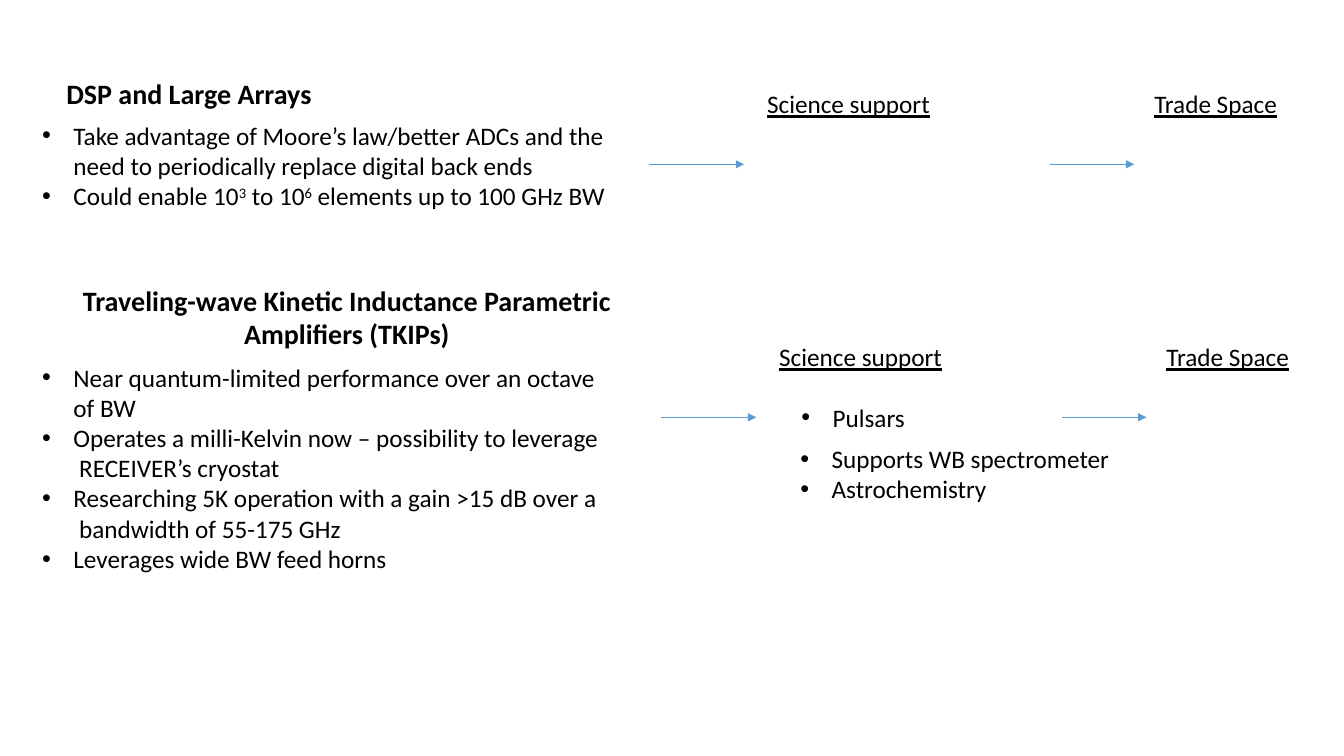
from lxml.etree import SubElement
from pptx import Presentation
from pptx.dml.color import RGBColor
from pptx.enum.shapes import MSO_CONNECTOR
from pptx.enum.text import MSO_AUTO_SIZE, PP_ALIGN
from pptx.oxml.ns import qn
from pptx.util import Inches, Pt

COLORS = {"text": "000000", "arrow": "5B9BD5"}
FONT = "Calibri"
BULLET_INDENT = 0.31

ARRAY_POINTS = [
    ["Take advantage of Moore’s law/better ADCs and the need to periodically replace digital back ends"],
    ["Could enable 10", ("3", 30), " to 10", ("6", 30), " elements up to 100 GHz BW"],
]
AMPLIFIER_POINTS = [
    ["Near quantum-limited performance over an octave of BW"],
    ["Operates a milli-Kelvin now – possibility to leverage  RECEIVER’s cryostat"],
    ["Researching 5K operation with a gain >15 dB over a  bandwidth of 55-175 GHz"],
    ["Leverages wide BW feed horns"],
]


def add_text_frame(slide, left, top, width, height, wrap):
    box = slide.shapes.add_textbox(Inches(left), Inches(top), Inches(width), Inches(height))
    frame = box.text_frame
    frame.word_wrap = wrap
    frame.auto_size = MSO_AUTO_SIZE.SHAPE_TO_FIT_TEXT
    return frame


def add_run(paragraph, text, size=18, bold=False, underline=False, superscript=0):
    run = paragraph.add_run()
    run.text = text
    run.font.name = FONT
    run.font.size = Pt(size)
    run.font.bold = bold
    run.font.underline = underline
    run.font.color.rgb = RGBColor.from_string(COLORS["text"])
    if superscript:
        run._r.get_or_add_rPr().set("baseline", str(superscript * 1000))


def add_heading(slide, text, left, top, width, height, wrap=False, align=PP_ALIGN.LEFT):
    paragraph = add_text_frame(slide, left, top, width, height, wrap).paragraphs[0]
    paragraph.alignment = align
    add_run(paragraph, text, size=20, bold=True)


def add_label(slide, text, left, top, width, wrap):
    paragraph = add_text_frame(slide, left, top, width, 0.4, wrap).paragraphs[0]
    add_run(paragraph, text, underline=True)


def set_bullet(paragraph):
    properties = paragraph._p.get_or_add_pPr()
    properties.set("marL", str(Inches(BULLET_INDENT)))
    properties.set("indent", str(-Inches(BULLET_INDENT)))
    SubElement(properties, qn("a:buFont")).set("typeface", "Arial")
    SubElement(properties, qn("a:buChar")).set("char", "•")


def add_bullets(slide, points, left, top, width, height, wrap=True):
    frame = add_text_frame(slide, left, top, width, height, wrap)
    for index, parts in enumerate(points):
        paragraph = frame.add_paragraph() if index else frame.paragraphs[0]
        set_bullet(paragraph)
        for part in parts:
            text, superscript = part if isinstance(part, tuple) else (part, 0)
            add_run(paragraph, text, superscript=superscript)


def add_arrow(slide, left, right, y):
    arrow = slide.shapes.add_connector(
        MSO_CONNECTOR.STRAIGHT, Inches(left), Inches(y), Inches(right), Inches(y)
    )
    arrow.line.color.rgb = RGBColor.from_string(COLORS["arrow"])
    arrow.line.width = Pt(0.5)
    SubElement(arrow.line._get_or_add_ln(), qn("a:tailEnd")).set("type", "triangle")
    SubElement(arrow._element.spPr, qn("a:effectLst"))


def add_flow(slide, left, top):
    arrow_y = top + 0.8
    add_label(slide, "Trade Space", left + 4.91, top, 3.3, True)
    add_arrow(slide, left, left + 0.94, arrow_y)
    add_label(slide, "Science support", left + 1.07, top, 1.84, False)
    add_arrow(slide, left + 3.97, left + 4.81, arrow_y)


def main():
    presentation = Presentation()
    presentation.slide_width = Inches(13.33)
    presentation.slide_height = Inches(7.5)
    slide = presentation.slides.add_slide(presentation.slide_layouts[6])

    add_heading(slide, "DSP and Large Arrays", 0.56, 0.71, 2.66, 0.44)
    add_bullets(slide, ARRAY_POINTS, 0.32, 1.14, 5.86, 1.01)
    add_flow(slide, 6.44, 0.83)

    add_heading(
        slide, "Traveling-wave Kinetic Inductance Parametric Amplifiers (TKIPs)",
        0.32, 2.76, 6.24, 0.77, wrap=True, align=PP_ALIGN.CENTER,
    )
    add_bullets(slide, AMPLIFIER_POINTS, 0.32, 3.54, 5.75, 2.22)
    add_flow(slide, 6.56, 3.34)
    add_bullets(slide, [["Pulsars"]], 7.85, 3.94, 1.24, 0.4, wrap=False)
    add_bullets(
        slide, [["Supports WB spectrometer"], ["Astrochemistry"]],
        7.84, 4.35, 3.3, 1.01, wrap=False,
    )
    presentation.save("out.pptx")


if __name__ == "__main__":
    main()
